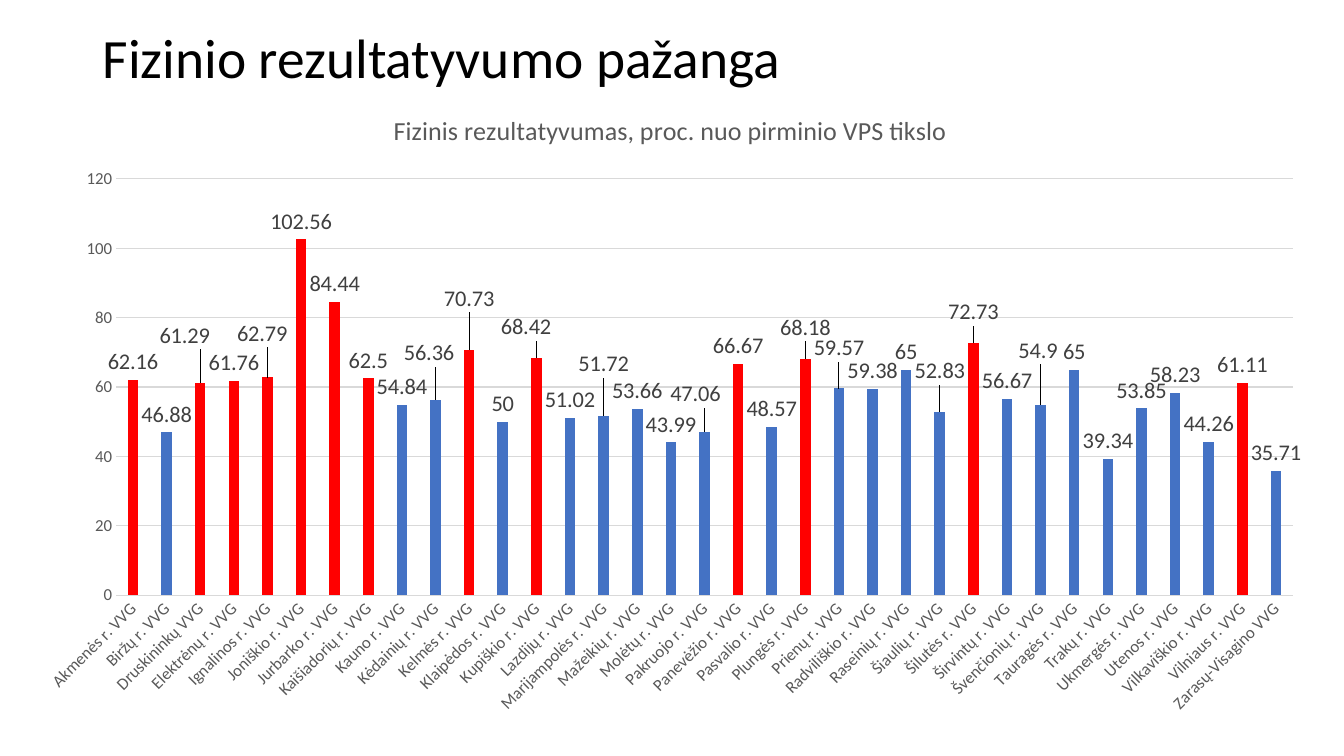
from pptx import Presentation
from pptx.chart.data import CategoryChartData as ChartData
from pptx.dml.color import RGBColor as Color
from pptx.enum.chart import XL_CHART_TYPE as ChartType
from pptx.enum.chart import XL_LABEL_POSITION as LabelPosition
from pptx.enum.chart import XL_TICK_MARK as TickMark
from pptx.enum.text import MSO_ANCHOR as Anchor
from pptx.oxml import parse_xml
from pptx.oxml.ns import nsdecls
from pptx.util import Inches, Pt

COLORS = {"title": "000000", "axis": "595959", "label": "404040",
          "grid": "D9D9D9", "bar": "4472C4", "highlight": "FF0000"}
FORMATS = {
    "title": {"name": "Calibri", "size": Pt(39.6), "bold": False},
    "caption": {"name": "Calibri", "size": Pt(18.6), "bold": False},
    "axis": {"name": "Calibri", "size": Pt(12), "bold": False},
    "label": {"name": "Calibri", "size": Pt(16), "bold": False},
}
WIDTH, HEIGHT = Inches(13.33), Inches(7.5)
CAPTION = "Fizinis rezultatyvumas, proc. nuo pirminio VPS tikslo"

PROGRESS = {
    "Akmenės r. VVG": 62.16, "Biržų r. VVG": 46.88, "Druskininkų VVG": 61.29,
    "Elektrėnų r. VVG": 61.76, "Ignalinos r. VVG": 62.79,
    "Joniškio r. VVG": 102.56, "Jurbarko r. VVG": 84.44,
    "Kaišiadorių r. VVG": 62.5, "Kauno r. VVG": 54.84,
    "Kėdainių r. VVG": 56.36, "Kelmės r. VVG": 70.73, "Klaipėdos r. VVG": 50,
    "Kupiškio r. VVG": 68.42, "Lazdijų r. VVG": 51.02,
    "Marijampolės r. VVG": 51.72, "Mažeikių r. VVG": 53.66,
    "Molėtų r. VVG": 43.99, "Pakruojo r. VVG": 47.06,
    "Panevėžio r. VVG": 66.67, "Pasvalio r. VVG": 48.57,
    "Plungės r. VVG": 68.18, "Prienų r. VVG": 59.57,
    "Radviliškio r. VVG": 59.38, "Raseinių r. VVG": 65,
    "Šiaulių r. VVG": 52.83, "Šilutės r. VVG": 72.73,
    "Širvintų r. VVG": 56.67, "Švenčionių r. VVG": 54.9,
    "Tauragės r. VVG": 65, "Trakų r. VVG": 39.34, "Ukmergės r. VVG": 53.85,
    "Utenos r. VVG": 58.23, "Vilkaviškio r. VVG": 44.26,
    "Vilniaus r. VVG": 61.11, "Zarasų-Visagino VVG": 35.71,
}
# Bars above the threshold are highlighted, apart from these two
THRESHOLD = 60
NOT_HIGHLIGHTED = {"Raseinių r. VVG", "Tauragės r. VVG"}
# Label shifts as percent of the chart's width and height
LABEL_SHIFTS = {
    "Druskininkų VVG": (-1.2, -4.5), "Ignalinos r. VVG": (-0.4, -4),
    "Kėdainių r. VVG": (-0.5, -4.5), "Kelmės r. VVG": (0, -5.2),
    "Kupiškio r. VVG": (-0.8, -2), "Marijampolės r. VVG": (0, -5.3),
    "Pakruojo r. VVG": (-0.7, -3.1), "Plungės r. VVG": (0, -2),
    "Prienų r. VVG": (0, -3.5), "Šiaulių r. VVG": (0, -3.6),
    "Šilutės r. VVG": (0, -2), "Švenčionių r. VVG": (-0.2, -5.7),
}


def share(left, top, width, height):
    """Turn percentages of the slide into lengths."""
    return [int(whole * part / 100) for whole, part in
            zip((WIDTH, HEIGHT) * 2, (left, top, width, height))]


def style_font(font, kind, color):
    for key, value in FORMATS[kind].items():
        setattr(font, key, value)
    font.color.rgb = Color.from_string(COLORS[color])


def style_line(line, color):
    line.color.rgb = Color.from_string(COLORS[color])
    line.width = Pt(0.75)


def insert_layout(parent, index, **percents):
    """Place a chart part by percentages of the chart's size."""
    for old in parent.xpath("c:layout"):
        parent.remove(old)
    inner = '<c:layoutTarget val="inner"/>' if "w" in percents else ""
    modes = "".join(f'<c:{key}Mode val="edge"/>' for key in "xy") if inner else ""
    values = "".join(f'<c:{key} val="{value / 100:.4f}"/>'
                     for key, value in percents.items())
    parent.insert(index, parse_xml(
        f'<c:layout {nsdecls("c")}><c:manualLayout>{inner}{modes}{values}'
        '</c:manualLayout></c:layout>'))


def add_title(page, text):
    box = page.shapes.add_textbox(*share(6.9, 4, 86.3, 7.9))
    frame = box.text_frame
    frame.word_wrap = True
    frame.vertical_anchor = Anchor.MIDDLE
    para = frame.paragraphs[0]
    para.line_spacing = 0.9
    span = para.add_run()
    span.text = text
    style_font(span.font, "title", "title")


def style_axes(chart):
    for axis in (chart.category_axis, chart.value_axis):
        axis.major_tick_mark = axis.minor_tick_mark = TickMark.NONE
        style_font(axis.tick_labels.font, "axis", "axis")
    style_line(chart.category_axis.format.line, "grid")
    # Slanted category names
    for body in chart.element.xpath(".//c:catAx/c:txPr/a:bodyPr"):
        body.set("rot", "-2700000")
        body.set("vert", "horz")
    values = chart.value_axis
    values.minimum_scale, values.maximum_scale, values.major_unit = 0, 120, 20
    values.format.line.fill.background()
    style_line(values.major_gridlines.format.line, "grid")


def style_bars(plot):
    series = plot.series[0]
    series.format.fill.solid()
    series.format.fill.fore_color.rgb = Color.from_string(COLORS["bar"])
    for index, (name, value) in enumerate(PROGRESS.items()):
        if value > THRESHOLD and name not in NOT_HIGHLIGHTED:
            fill = series.points[index].format.fill
            fill.solid()
            fill.fore_color.rgb = Color.from_string(COLORS["highlight"])


def add_labels(chart, plot):
    plot.has_data_labels = True
    series = plot.series[0]
    labels = series.data_labels
    labels.show_value = True
    labels.position = LabelPosition.OUTSIDE_END
    style_font(labels.font, "label", "label")
    # Labels moved clear of their neighbours
    names = list(PROGRESS)
    for name, (right, down) in LABEL_SHIFTS.items():
        index = names.index(name)
        label = series.points[index].data_label
        style_font(label.font, "label", "label")
        label.position = LabelPosition.OUTSIDE_END
        element = chart.element.xpath(f".//c:dLbl[c:idx/@val='{index}']")[0]
        insert_layout(element, 1, x=right, y=down)


def add_progress_chart(page):
    data = ChartData()
    data.categories = list(PROGRESS)
    data.add_series(CAPTION, list(PROGRESS.values()))
    chart = page.shapes.add_chart(
        ChartType.COLUMN_CLUSTERED, *share(1.65, 11.87, 96.47, 84.27), data).chart
    chart.has_legend = False
    chart.font.name, chart.font.size = "Calibri", Pt(10)
    chart.has_title = True
    para = chart.chart_title.text_frame.paragraphs[0]
    span = para.add_run()
    span.text = CAPTION
    style_font(span.font, "caption", "axis")
    plot = chart.plots[0]
    plot.gap_width, plot.overlap, plot.vary_by_categories = 219, -27, False
    style_axes(chart)
    style_bars(plot)
    add_labels(chart, plot)
    area = chart.element.xpath(".//c:plotArea")[0]
    insert_layout(area, 0, x=7.25, y=14, w=90.75, h=65.35)


def main():
    deck = Presentation()
    deck.slide_width, deck.slide_height = WIDTH, HEIGHT
    page = deck.slides.add_slide(deck.slide_layouts[6])
    add_title(page, "Fizinio rezultatyvumo pažanga")
    add_progress_chart(page)
    deck.save("out.pptx")


if __name__ == "__main__":
    main()
